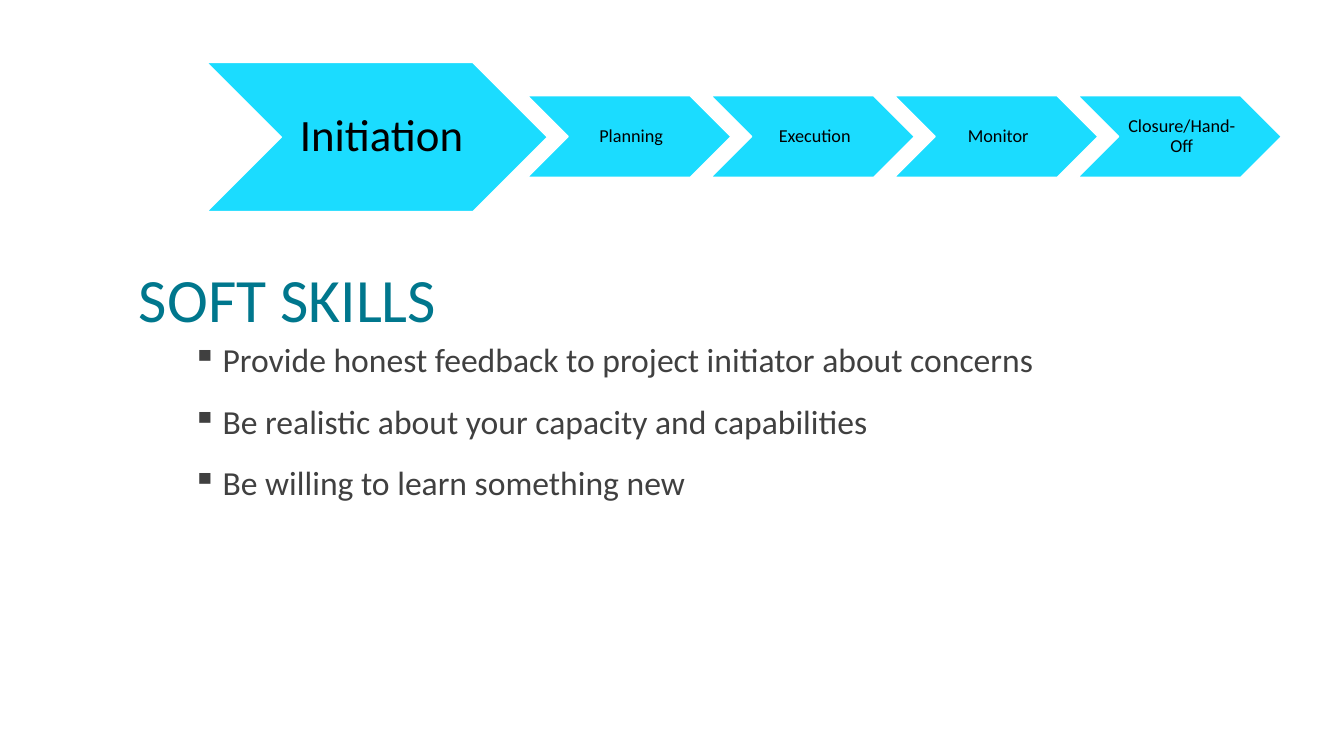
from lxml import etree
from pptx import Presentation
from pptx.dml.color import RGBColor
from pptx.enum import shapes, text
from pptx.oxml import ns
from pptx.util import Inches, Pt

TEAL = RGBColor(0x00, 0x77, 0x8D)
GRAY = RGBColor(0x40, 0x40, 0x40)
CYAN = RGBColor(0x1B, 0xDC, 0xFF)
WHITE = RGBColor(0xFF, 0xFF, 0xFF)
BLACK = RGBColor(0x00, 0x00, 0x00)

LATER_PHASES = ["Planning", "Execution", "Monitor", "Closure/Hand-Off"]
SKILLS = [
    "Provide honest feedback to project initiator about concerns",
    "Be realistic about your capacity and capabilities",
    "Be willing to learn something new",
]


def set_format(target, values):
    for name, value in values.items():
        setattr(target, name, value)


def write(paragraph, words, size, color, spacing):
    paragraph.text = words
    paragraph.line_spacing = spacing
    set_format(paragraph.font, {"name": "Calibri", "size": Pt(size)})
    paragraph.font.color.rgb = color


prs = Presentation()
prs.slide_width = Inches(13.33)
prs.slide_height = Inches(7.5)
slide = prs.slides.add_slide(prs.slide_layouts[6])

heading = slide.shapes.add_textbox(Inches(1.28), Inches(1.95), Inches(10.25), Inches(1.42)).text_frame
set_format(heading, {"word_wrap": True, "vertical_anchor": text.MSO_ANCHOR.BOTTOM})
write(heading.paragraphs[0], "SOFT SKILLS", 44, TEAL, 0.85)

skill_list = slide.shapes.add_textbox(Inches(1.81), Inches(3.36), Inches(10.25), Inches(4.1)).text_frame
skill_list.word_wrap = True
for index, skill in enumerate(SKILLS):
    item = skill_list.add_paragraph() if index else skill_list.paragraphs[0]
    properties = item._p.get_or_add_pPr()
    properties.set("marL", str(Inches(0.3)))
    properties.set("indent", str(-Inches(0.3)))
    etree.SubElement(properties, ns.qn("a:buChar")).set("char", "▪")
    write(item, skill, 24, GRAY, 0.9)
    if index:
        item.space_before = Pt(18)

phases = [("Initiation", 2.05, 0.62, 3.38, 1.48, 32, 0.14, 0.05)]
phases += [
    (phase, 5.23 + 1.82 * step, 0.95, 2.02, 0.81, 13, 0.06, 0.02)
    for step, phase in enumerate(LATER_PHASES)
]
for phase, left, top, width, height, size, left_inset, inset in phases:
    chevron = slide.shapes.add_shape(
        shapes.MSO_SHAPE.CHEVRON, Inches(left), Inches(top), Inches(width), Inches(height)
    )
    chevron.shadow.inherit = False
    chevron.fill.solid()
    chevron.fill.fore_color.rgb = CYAN
    chevron.line.color.rgb = WHITE
    chevron.line.width = Pt(1)
    set_format(chevron.text_frame, {
        "word_wrap": True,
        "vertical_anchor": text.MSO_ANCHOR.MIDDLE,
        "margin_left": Inches(left_inset),
        "margin_top": Inches(inset),
        "margin_right": Inches(inset),
        "margin_bottom": Inches(inset),
    })
    label = chevron.text_frame.paragraphs[0]
    label.alignment = text.PP_ALIGN.CENTER
    write(label, phase, size, BLACK, 0.9)

prs.save("out.pptx")
